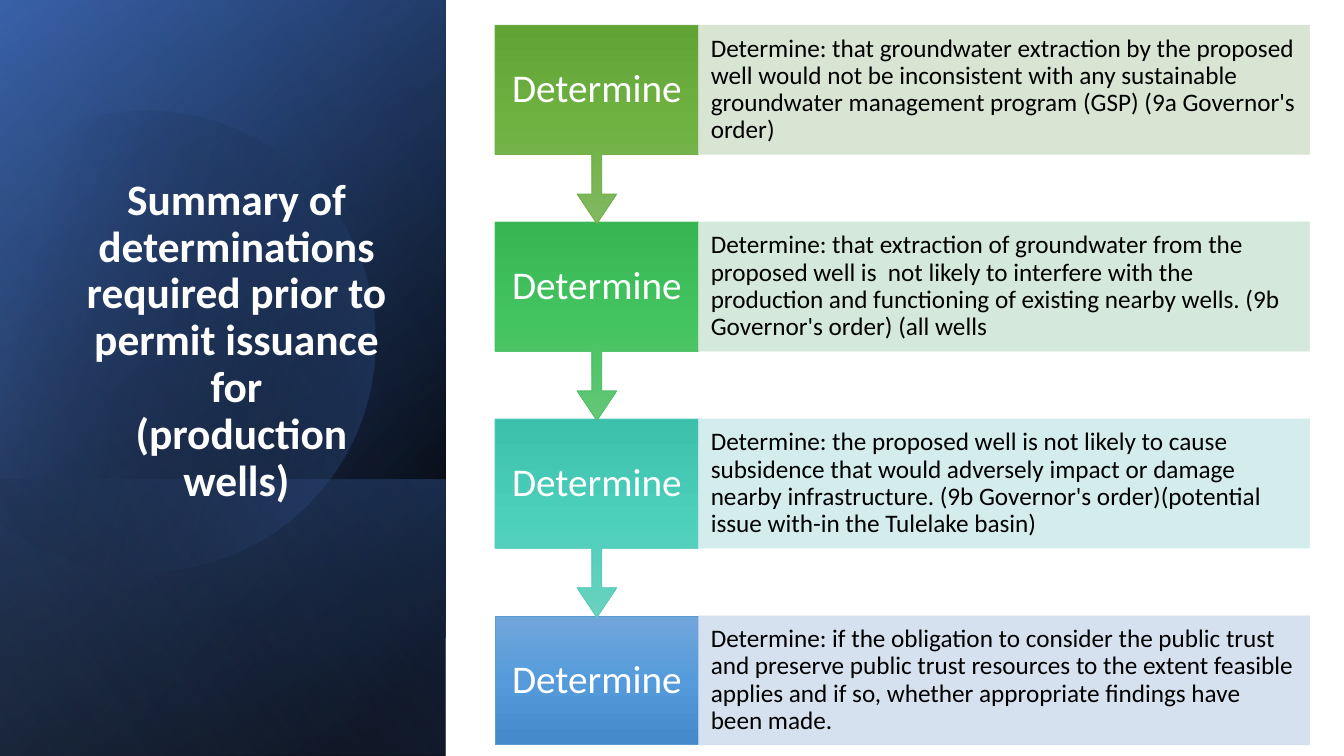
from math import cos, radians, sin

from lxml import etree
from pptx import Presentation
from pptx.dml.color import RGBColor
from pptx.enum.shapes import MSO_SHAPE
from pptx.enum.text import MSO_ANCHOR, MSO_AUTO_SIZE, PP_ALIGN
from pptx.oxml.ns import qn
from pptx.util import Inches, Pt

RECT, CALLOUT = MSO_SHAPE.RECTANGLE, MSO_SHAPE.UP_ARROW_CALLOUT
MIDDLE, BOTTOM = MSO_ANCHOR.MIDDLE, MSO_ANCHOR.BOTTOM
LEFT, CENTER = PP_ALIGN.LEFT, PP_ALIGN.CENTER
NO_FIT = MSO_AUTO_SIZE.NONE

BLACK = RGBColor(0x00, 0x00, 0x00)
WHITE = RGBColor(0xFF, 0xFF, 0xFF)
NAVY = RGBColor(0x2F, 0x55, 0x97)
BLUE = RGBColor(0x44, 0x72, 0xC4)
PALE = RGBColor(0x8F, 0xAA, 0xDC)

FONT = "Calibri"
TITLE = "Summary of determinations required prior to permit issuance\vfor\v (production wells)"
LABEL = "Determine"
STEPS = [
    ("Determine: that groundwater extraction by the proposed well would not be inconsistent with any "
     "sustainable groundwater management program (GSP) (9a Governor's order)",
     ("81B861", "6FB242", "62A336"), "70AD47", "D5E3CF"),
    ("Determine: that extraction of groundwater from the proposed well is  not likely to interfere with "
     "the production and functioning of existing nearby wells. (9b Governor's order) (all wells",
     ("64C677", "44C460", "36B552"), "49BF64", "D0E7D8"),
    ("Determine: the proposed well is not likely to cause subsidence that would adversely impact or damage "
     "nearby infrastructure. (9b Governor's order)(potential issue with-in the Tulelake basin)",
     ("6AD1C0", "4CD0BC", "3CC0AC"), "52CAB8", "D0ECEA"),
    ("Determine: if the obligation to consider the public trust and preserve public trust resources to the "
     "extent feasible applies and if so, whether appropriate findings have been made.",
     ("71A6DB", "559BDB", "448ACA"), "5B9BD5", "D2DEEF"),
]

PANEL = (-1.54, 1.54, 7.5, 4.42)
LOWER = (0.84, 3.92, 2.74, 4.42)
BASE = (PANEL, 50, [(8, BLACK, 100), (100, NAVY, 100)])
TINTS = [
    (PANEL, 30, [(0, BLACK, 0), (99, BLUE, 46)]),
    (LOWER, 130, [(2, BLUE, 29), (100, BLACK, 30)]),
]
SHEEN = (PANEL, 120, [(0, BLACK, 0), (99, PALE, 11)])
DISC_FILL = (30, [(29, BLACK, 0), (100, BLUE, 43)])
DISC_MID = (1.585, 3.345)
DISC_TURN = 343.9
DISC_START = (1.49, 1.1)
DISC_CURVES = [
    [(2.46, 1.12), (3.35, 1.77), (3.63, 2.75)],
    [(3.98, 3.97), (3.28, 5.23), (2.07, 5.58)],
    [(1.31, 5.8), (0.53, 5.61), (-0.03, 5.14)],
    [(-0.15, 5.03)],
    [(-0.15, 1.75)],
    [(0, 1.61)],
    [(0.23, 1.42), (0.5, 1.28), (0.8, 1.19)],
    [(1.03, 1.13), (1.26, 1.1), (1.49, 1.1)],
]
CUTS = 16

TOP, PITCH = 0.25, 5.86 / 3
BOX_X, BOX_W, BOX_H, ARROW_H = 4.91, 2.02, 1.28, 1.97
NOTE_X, NOTE_W = 6.93, 6.06


def blend(shape, angle, stops):
    shape.shadow.inherit = False
    shape.fill.background()
    props = shape._element.spPr
    grad = etree.Element(qn("a:gradFill"), rotWithShape="1")
    items = etree.SubElement(grad, qn("a:gsLst"))
    for spot, color, alpha in stops:
        stop = etree.SubElement(items, qn("a:gs"), pos=str(spot * 1000))
        tone = etree.SubElement(stop, qn("a:srgbClr"), val=str(color))
        etree.SubElement(tone, qn("a:alpha"), val=str(alpha * 1000))
    etree.SubElement(grad, qn("a:lin"), ang=str(angle * 60000), scaled="0")
    props.replace(props.find(qn("a:noFill")), grad)


def edge(shape, color):
    shape.line.color.rgb = color
    shape.line.width = Pt(0.5)


def write(shape, text, size, color, align, anchor, pad=None):
    frame = shape.text_frame
    frame.word_wrap = True
    frame.auto_size = NO_FIT
    frame.vertical_anchor = anchor
    if pad:
        frame.margin_left = frame.margin_right = Inches(pad[0])
        frame.margin_top = frame.margin_bottom = Inches(pad[1])
    frame.text = text
    para = frame.paragraphs[0]
    para.alignment = align
    para.line_spacing = 0.9
    para.font.name = FONT
    para.font.size = Pt(size)
    para.font.color.rgb = color
    return para


def add_panel(shapes, box, angle, stops):
    panel = shapes.add_shape(RECT, *map(Inches, box))
    panel.rotation = 90
    panel._element.spPr.find(qn("a:xfrm")).set("flipH", "1")
    blend(panel, angle, stops)
    panel.line.fill.background()


def bend(start, a, b, end, t):
    u = 1 - t
    return tuple(u**3 * p + 3 * u * u * t * q + 3 * u * t * t * r + t**3 * s
                 for p, q, r, s in zip(start, a, b, end))


def unturn(point):
    angle = radians(360 - DISC_TURN)
    x, y = point[0] - DISC_MID[0], point[1] - DISC_MID[1]
    return (Inches(DISC_MID[0] + x * cos(angle) - y * sin(angle)),
            Inches(DISC_MID[1] + x * sin(angle) + y * cos(angle)))


def add_disc(shapes):
    points = [DISC_START]
    for curve in DISC_CURVES:
        if len(curve) == 1:
            points += curve
        else:
            start = points[-1]
            points += [bend(start, *curve, n / CUTS) for n in range(1, CUTS + 1)]
    spots = [unturn(point) for point in points]
    pen = shapes.build_freeform(*spots[0], scale=1.0)
    pen.add_line_segments(spots[1:], close=True)
    disc = pen.convert_to_shape()
    disc.rotation = DISC_TURN
    blend(disc, *DISC_FILL)
    disc.line.fill.background()


def add_step(shapes, row, text, tones, rim, tint):
    y = Inches(TOP + row * PITCH)
    x, width, high = Inches(BOX_X), Inches(BOX_W), Inches(BOX_H)
    if row == len(STEPS) - 1:
        box = shapes.add_shape(RECT, x, y, width, high)
    else:
        box = shapes.add_shape(CALLOUT, x, y, width, Inches(ARROW_H))
        box.rotation = 180
        for n, value in enumerate((0.05, 0.1, 0.15, 0.65)):
            box.adjustments[n] = value
    blend(box, 90, [(n * 50, RGBColor.from_string(tone), 100) for n, tone in enumerate(tones)])
    edge(box, RGBColor.from_string(rim))
    label = shapes.add_textbox(x, y, width, high)
    write(label, LABEL, 28, WHITE, CENTER, MIDDLE, (0.14, 0.22))

    note = shapes.add_shape(RECT, Inches(NOTE_X), y, Inches(NOTE_W), high)
    note.shadow.inherit = False
    note.fill.solid()
    note.fill.fore_color.rgb = RGBColor.from_string(tint)
    edge(note, RGBColor.from_string(tint))
    for tone in note._element.spPr.iter(qn("a:srgbClr")):
        etree.SubElement(tone, qn("a:alpha"), val="90000")
    write(note, text, 18, BLACK, LEFT, MIDDLE, (0.12, 0.25))


def main():
    deck = Presentation()
    deck.slide_width, deck.slide_height = Inches(13.33), Inches(7.5)
    slide = deck.slides.add_slide(deck.slide_layouts[5])
    shapes = slide.shapes
    add_panel(shapes, *BASE)
    for tint in TINTS:
        add_panel(shapes, *tint)
    add_disc(shapes)
    add_panel(shapes, *SHEEN)

    title = shapes.title
    title.left, title.top, title.width, title.height = map(Inches, (0.64, 1.37, 3.41, 3.7))
    write(title, TITLE, 31, WHITE, CENTER, BOTTOM).font.bold = True
    shapes._spTree.append(title._element)

    steps = shapes.add_group_shape().shapes
    for row, step in reversed(list(enumerate(STEPS))):
        add_step(steps, row, *step)
    deck.save("out.pptx")


if __name__ == "__main__":
    main()
